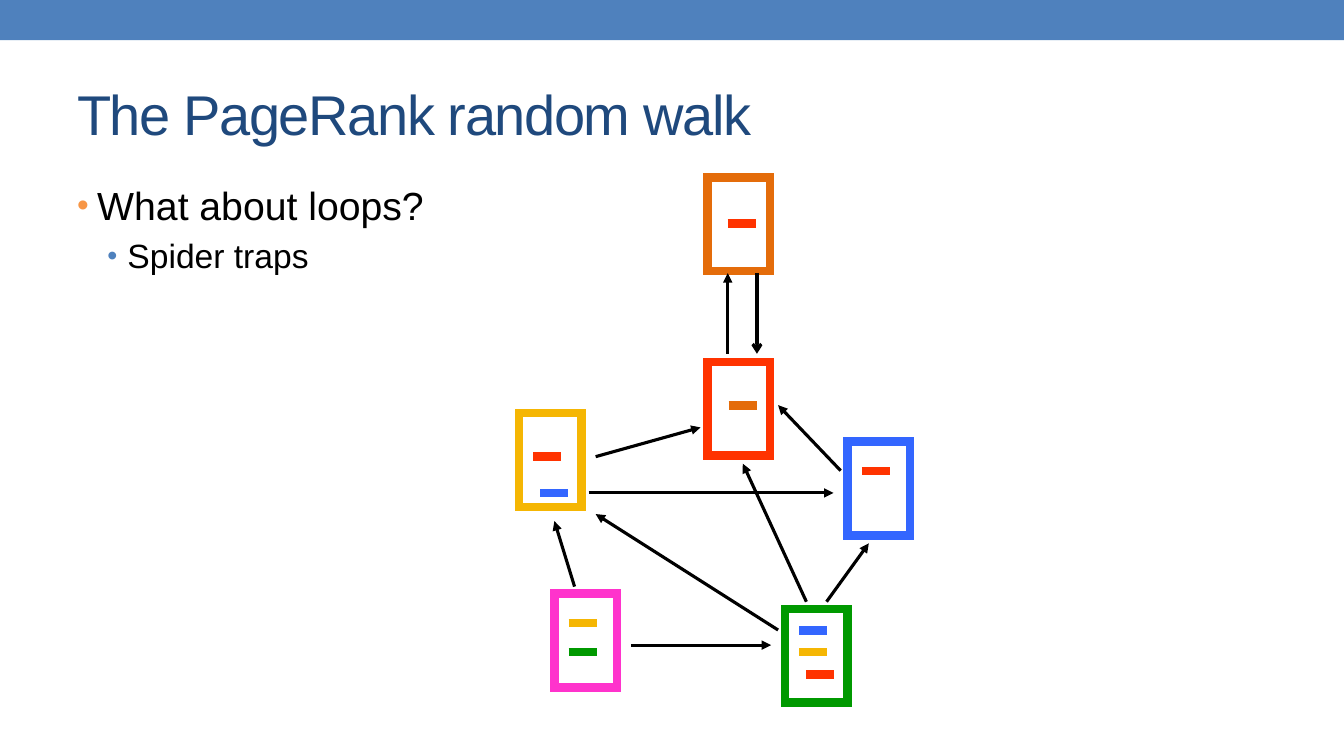
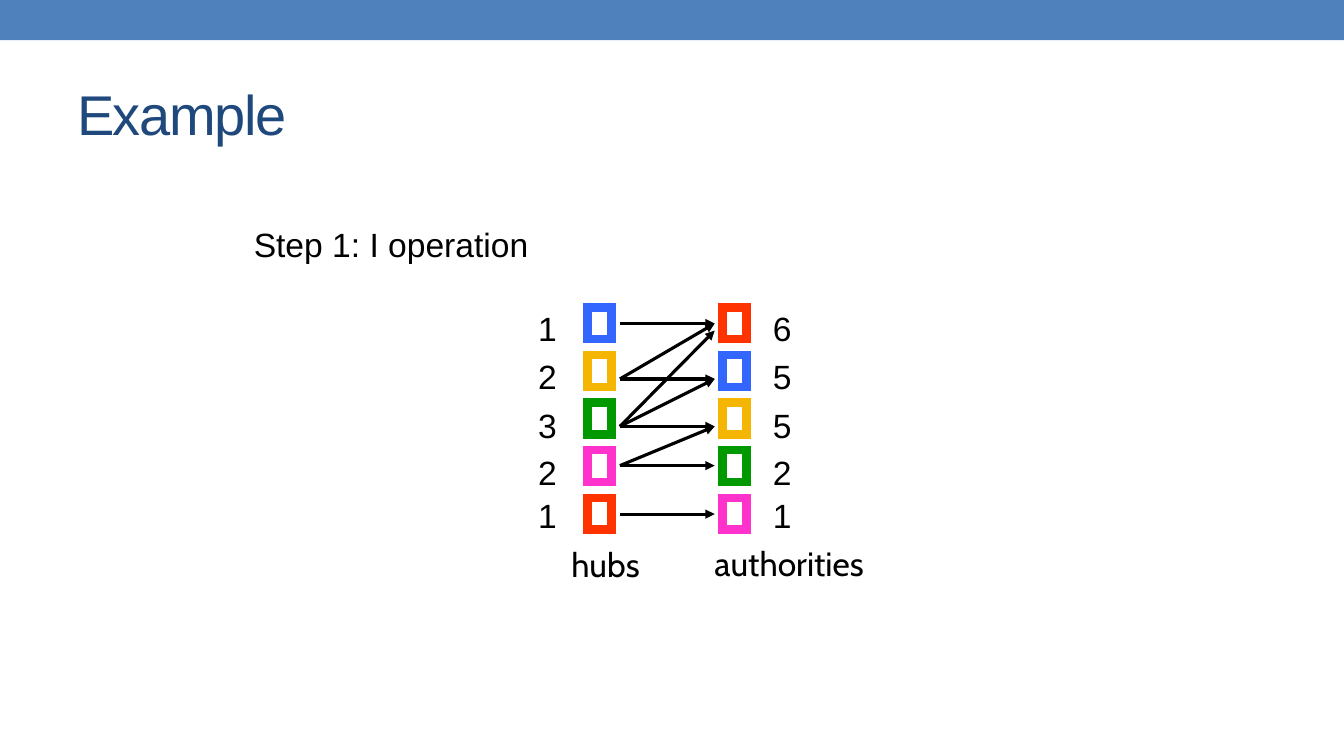
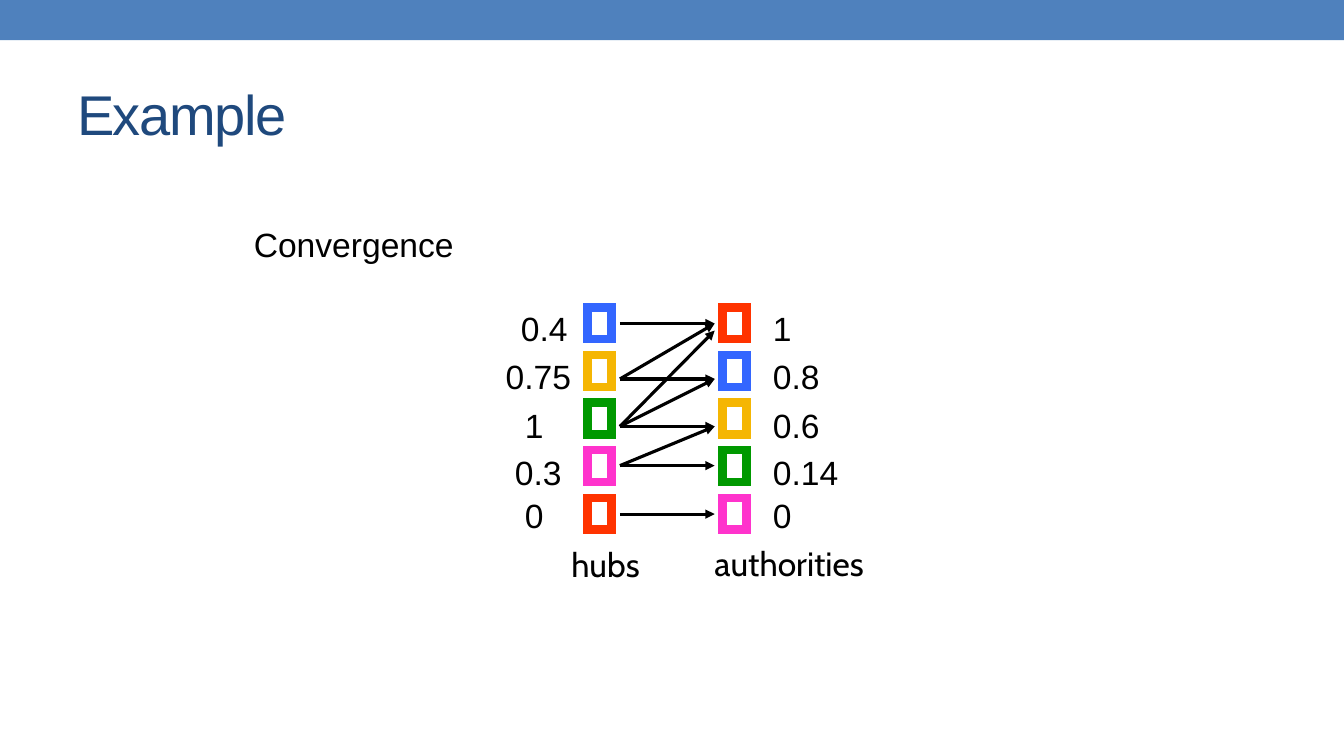
import pptx
import pptx.dml.color
import pptx.enum.shapes
import pptx.enum.text
import pptx.oxml
import pptx.oxml.ns
import pptx.util
from lxml import etree

Pt = pptx.util.Pt

COLORS = {
    "band": "4F81BD", "title": "1F497D", "accent": "F79646",
    "black": "000000", "white": "FFFFFF",
    "yellow": "F5B603", "pink": "FF33CC", "green": "009900",
    "blue": "3366FF", "red": "FF3300", "orange": "E46C0A",
}


def rgb(name):
    return pptx.dml.color.RGBColor.from_string(COLORS[name])


def add_xml(parent, tag, **attributes):
    return etree.SubElement(parent, pptx.oxml.ns.qn(tag), attributes)


def write(para, text, *, size=24, font="Arial", color="black", tracking=0,
          before=0, bullet=None, indent=0, hang=14.4):
    """Put formatted text in a paragraph; bullet names the bullet's colour."""
    span = para.add_run()
    span.text = text
    span.font.size = Pt(size)
    span.font.name = font
    span.font.color.rgb = rgb(color)
    if tracking:
        span._r.get_or_add_rPr().set("spc", str(tracking * 100))
    if before:
        para.space_before = Pt(before)
    if bullet:
        properties = para._p.get_or_add_pPr()
        properties.set("marL", str(Pt(indent)))
        properties.set("indent", str(-Pt(hang)))
        add_xml(add_xml(properties, "a:buClr"), "a:srgbClr", val=COLORS[bullet])
        add_xml(properties, "a:buSzPct", val="85000")
        add_xml(properties, "a:buFont", typeface="Arial")
        add_xml(properties, "a:buChar", char="•")


class Slides:
    WIDTH, HEIGHT = 960, 540
    FRAME, ARROW = 6, 2.25

    def __init__(self):
        self.deck = pptx.Presentation()
        self.deck.slide_width = Pt(self.WIDTH)
        self.deck.slide_height = Pt(self.HEIGHT)
        self.page = None

    def start(self, title):
        self.page = self.deck.slides.add_slide(self.deck.slide_layouts[6])
        self.rect(0, 0, self.WIDTH, 28.8, fill="band")
        box = self.box(48, 42, 864, 78, wrap=True)
        box.vertical_anchor = pptx.enum.text.MSO_ANCHOR.MIDDLE
        write(box.paragraphs[0], title, size=40, color="title", tracking=-1)

    def box(self, x, y, width, height, wrap):
        frame = self.page.shapes.add_textbox(
            Pt(x), Pt(y), Pt(width), Pt(height)).text_frame
        frame.word_wrap = wrap
        return frame

    def label(self, text, x, y, width, **style):
        frame = self.box(x, y, width, 36.3, wrap=False)
        frame.auto_size = pptx.enum.text.MSO_AUTO_SIZE.SHAPE_TO_FIT_TEXT
        write(frame.paragraphs[0], text, **style)

    def bullets(self, x, y, width, height, items):
        frame = self.box(x, y, width, height, wrap=True)
        for number, (text, style) in enumerate(items):
            para = frame.add_paragraph() if number else frame.paragraphs[0]
            write(para, text, **style)

    def rect(self, x, y, width, height, fill="white", frame=None):
        shape = self.page.shapes.add_shape(
            pptx.enum.shapes.MSO_SHAPE.RECTANGLE,
            Pt(x), Pt(y), Pt(width), Pt(height))
        shape.shadow.inherit = False
        shape.fill.solid()
        shape.fill.fore_color.rgb = rgb(fill)
        if frame:
            shape.line.color.rgb = rgb(frame)
            shape.line.width = Pt(self.FRAME)
            outline = shape.element.spPr.find(pptx.oxml.ns.qn("a:ln"))
            add_xml(outline, "a:miter", lim="800000")
        else:
            shape.line.fill.background()

    def line(self, x1, y1, x2, y2, color="black", width=ARROW, tip=None):
        connector = self.page.shapes.add_connector(
            pptx.enum.shapes.MSO_CONNECTOR.STRAIGHT,
            Pt(x1), Pt(y1), Pt(x2), Pt(y2))
        connector.line.color.rgb = rgb(color)
        connector.line.width = Pt(width)
        properties = connector.element.spPr
        if tip:
            add_xml(properties.find(pptx.oxml.ns.qn("a:ln")), "a:tailEnd", type=tip)
        add_xml(properties, "a:effectLst")


# Web pages: colour, left, top, then links as (colour, offset x, offset y)
WEB_PAGES = [
    ("yellow", 370.8, 295.2, [("blue", 15.1, 56.9), ("red", 10.1, 31)]),
    ("pink", 396, 424.1, [("yellow", 10.1, 20.9), ("green", 10.1, 41.8)]),
    ("green", 560.9, 434.9,
     [("blue", 10.1, 15.5), ("yellow", 10.1, 31), ("red", 15.1, 46.8)]),
    ("blue", 605.5, 315.4, [("red", 10.1, 20.9)]),
    ("red", 505.4, 258.5, [("orange", 15.1, 31.3)]),
    ("orange", 505.4, 126.7, [("red", 14.4, 33.1)]),
]
WALKS = [
    (450.7, 460.8, 550.8, 460.8), (410.4, 419, 396, 372.2),
    (425.5, 326.2, 500.4, 305.3), (420.5, 352.1, 595.4, 352.1),
    (600.5, 336.2, 555.8, 289.4), (576, 429.8, 530.6, 331.2),
    (590.4, 429.8, 620.6, 388.1), (555.8, 450, 425.5, 367.2),
    (519.8, 252.7, 519.8, 195.1),
]

HUBS = ["blue", "yellow", "green", "pink", "red"]
AUTHORITIES = ["red", "blue", "yellow", "green", "pink"]
ARROW_ROWS = [231.1, 270.7, 304.6, 332.6, 367.2]
SCORE_ROWS = [216.7, 250.6, 285.8, 319, 349.9]
SCORE_WIDTHS = {1: 28.1, 3: 48.2, 4: 61.9}
# Hub row, authority row, shift of the arrow tip
EDGES = [(0, 0, 0), (1, 0, 0), (1, 1, 0), (2, 2, 0), (2, 1, 0),
         (2, 0, 5), (3, 3, 0), (3, 2, 0), (4, 4, 0)]


def random_walk(slides):
    slides.start("The PageRank random walk")
    slides.bullets(48, 126, 864, 384, [
        ("What about loops?",
         dict(size=28, before=5.6, bullet="accent", indent=14.4)),
        ("Spider traps", dict(before=4.8, bullet="band", indent=36)),
    ])
    for color, x, y, links in WEB_PAGES:
        slides.rect(x, y, 44.6, 67, frame=color)
        for target, dx, dy in links:
            slides.line(x + dx, y + dy, x + dx + 20, y + dy,
                        color=target, width=slides.FRAME)
    for walk in WALKS:
        slides.line(*walk, tip="triangle")
    slides.line(540.7, 195.1, 540.7, 252.7, tip="arrow")


def hubs_example(slides, step, step_width, hub_scores, hub_lefts, authority_scores):
    slides.start("Example")
    for x, colors in ((419.8, HUBS), (516.2, AUTHORITIES)):
        for row, color in enumerate(colors):
            slides.rect(x, 219.6 + 34 * row, 17, 22.7, frame=color)
    for hub, authority, shift in EDGES:
        slides.line(442.8, ARROW_ROWS[hub], 510.5, ARROW_ROWS[authority] + shift,
                    tip="triangle")
    slides.label("hubs", 401, 385.2, 65.5, font="Cabin")
    slides.label("authorities", 503.3, 384.5, 126.7, font="Cabin")
    for scores, lefts in ((authority_scores, [545] * 5), (hub_scores, hub_lefts)):
        for score, x, y in zip(scores, lefts, SCORE_ROWS):
            slides.label(score, x, y, SCORE_WIDTHS[len(score)])
    slides.label(step, 174.2, 156.2, step_width)


def main():
    slides = Slides()
    random_walk(slides)
    hubs_example(slides, "Step 1: I operation", 212.4,
                 ["1", "2", "3", "2", "1"], [377.3] * 5,
                 ["6", "5", "5", "2", "1"])
    hubs_example(slides, "Convergence", 159.1,
                 ["0.4", "0.75", "1", "0.3", "0"],
                 [365, 354.2, 367.9, 360.7, 367.9],
                 ["1", "0.8", "0.6", "0.14", "0"])
    slides.deck.save("out.pptx")


if __name__ == "__main__":
    main()
